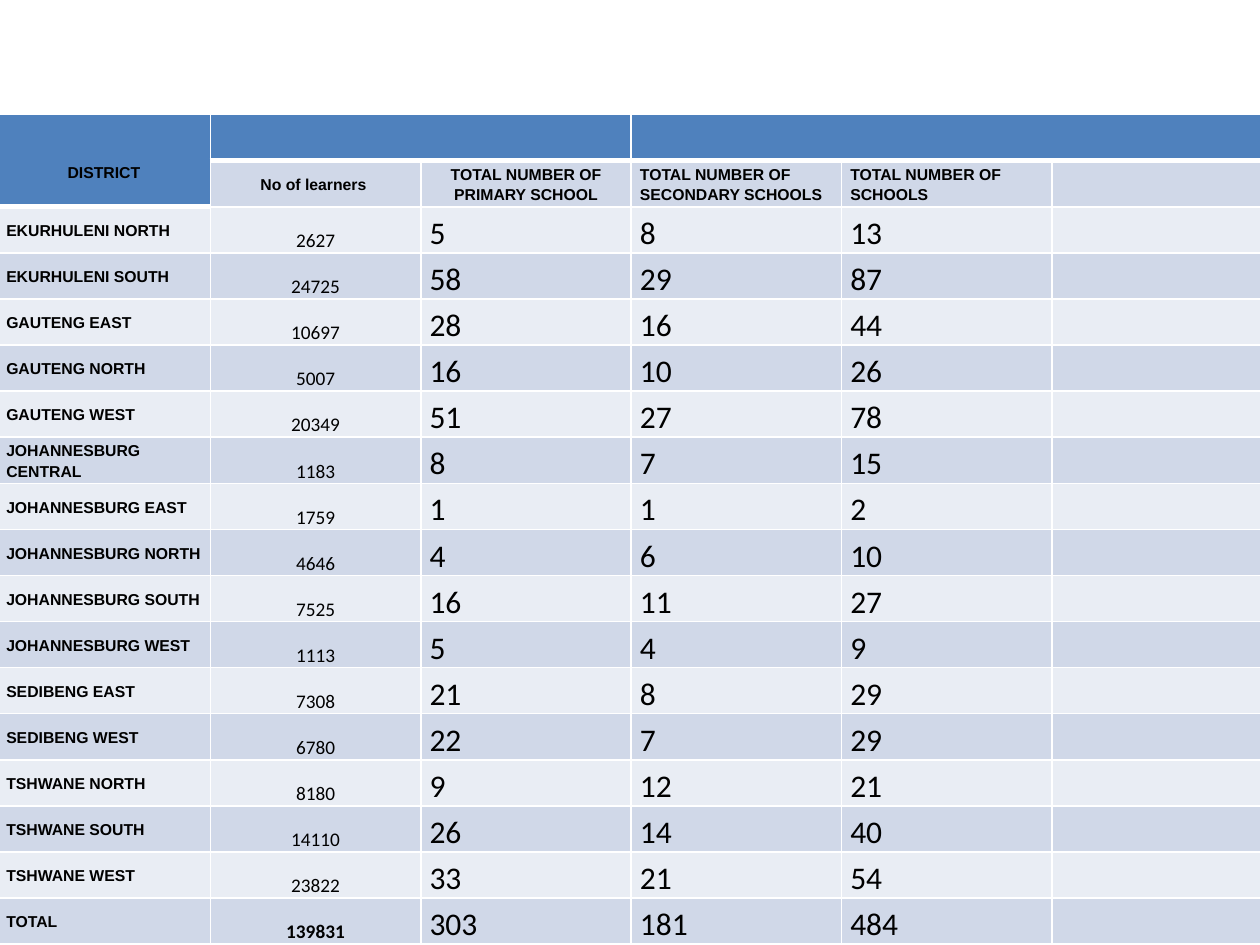
from lxml.etree import SubElement
from pptx import Presentation
from pptx.dml.color import RGBColor
from pptx.enum.text import MSO_ANCHOR, PP_ALIGN
from pptx.oxml.ns import qn
from pptx.util import Inches, Pt

# Content
HEADINGS = ["No of learners ", "TOTAL NUMBER OF PRIMARY SCHOOL",
            "TOTAL NUMBER OF SECONDARY SCHOOLS", "TOTAL NUMBER OF SCHOOLS"]
DISTRICTS = [  # district, learners, primary, secondary, all schools
    ("EKURHULENI NORTH", 2627, 5, 8, 13),
    ("EKURHULENI SOUTH", 24725, 58, 29, 87),
    ("GAUTENG EAST", 10697, 28, 16, 44),
    ("GAUTENG NORTH", 5007, 16, 10, 26),
    ("GAUTENG WEST", 20349, 51, 27, 78),
    ("JOHANNESBURG CENTRAL", 1183, 8, 7, 15),
    ("JOHANNESBURG EAST", 1759, 1, 1, 2),
    ("JOHANNESBURG NORTH", 4646, 4, 6, 10),
    ("JOHANNESBURG SOUTH", 7525, 16, 11, 27),
    ("JOHANNESBURG WEST", 1113, 5, 4, 9),
    ("SEDIBENG EAST", 7308, 21, 8, 29),
    ("SEDIBENG WEST", 6780, 22, 7, 29),
    ("TSHWANE NORTH", 8180, 9, 12, 21),
    ("TSHWANE SOUTH", 14110, 26, 14, 40),
    ("TSHWANE WEST", 23822, 33, 21, 54),
    ("TOTAL", 139831, 303, 181, 484),
]
COLS, ROWS = 6, len(DISTRICTS) + 2
LEFT, TOP, WIDTH, HEIGHT = -0.02, 0.91, 10.04, 6.59
FIRST_COL, OTHER_COL = 1.69, 1.67
BLUE, BAND_DARK, BAND_LIGHT = "4F81BD", "D0D8E8", "E9EDF4"
WHITE, BLACK = "FFFFFF", "000000"


def color(value):
    return RGBColor.from_string(value)


def add_border(cell, side, width):
    ln = SubElement(cell._tc.get_or_add_tcPr(), qn(f"a:ln{side}"), w=str(Pt(width)))
    fill = SubElement(ln, qn("a:solidFill"))
    SubElement(fill, qn("a:srgbClr"), val=WHITE)


def style_cell(cell, row, col):
    header = row == 0 or (row == 1 and col == 0)
    add_border(cell, "L", 1)
    add_border(cell, "R", 1)
    if row == 0:
        add_border(cell, "T", 1)
    add_border(cell, "B", 3 if header else 1)
    cell.fill.solid()
    band = BAND_DARK if row % 2 else BAND_LIGHT
    cell.fill.fore_color.rgb = color(BLUE if header else band)
    cell.margin_left = cell.margin_right = Inches(0.07)
    cell.margin_top = cell.margin_bottom = 0


def write(cell, text, size=9, font="Arial", bold=True, align=PP_ALIGN.LEFT,
          anchor=MSO_ANCHOR.MIDDLE, line=1.15, after=0):
    cell.vertical_anchor = anchor
    p = cell.text_frame.paragraphs[0]
    p.text = str(text)
    p.alignment = align
    p.line_spacing = line
    p.space_after = Pt(after)
    p.font.size, p.font.name, p.font.bold = Pt(size), font, bold
    p.font.color.rgb = color(BLACK)


prs = Presentation()
prs.slide_width, prs.slide_height = Inches(10), Inches(7.5)
s = prs.slides.add_slide(prs.slide_layouts[6])

# Table grid
table = s.shapes.add_table(ROWS, COLS, Inches(LEFT), Inches(TOP),
                           Inches(WIDTH), Inches(HEIGHT)).table
for i, column in enumerate(table.columns):
    column.width = Inches(OTHER_COL if i else FIRST_COL)
for r, row in enumerate(table.rows):
    row.height = Inches(HEIGHT / ROWS)
    for c, cell in enumerate(row.cells):
        style_cell(cell, r, c)

# Headings
table.cell(0, 0).merge(table.cell(1, 0))
table.cell(0, 1).merge(table.cell(0, 2))
table.cell(0, 3).merge(table.cell(0, 5))
write(table.cell(0, 0), "DISTRICT", align=PP_ALIGN.CENTER)
table.cell(0, 0).margin_top = Inches(0.17)
for c, heading in enumerate(HEADINGS, 1):
    write(table.cell(1, c), heading,
          align=PP_ALIGN.CENTER if c <= 2 else PP_ALIGN.LEFT)

# District rows
for r, (district, learners, *schools) in enumerate(DISTRICTS, 2):
    write(table.cell(r, 0), district, after=10)
    write(table.cell(r, 1), learners, 11, "Calibri", district == "TOTAL",
          PP_ALIGN.CENTER, MSO_ANCHOR.BOTTOM, after=10)
    for c, count in enumerate(schools, 2):
        write(table.cell(r, c), count, 18, "Calibri", False,
              anchor=MSO_ANCHOR.BOTTOM, line=1.0)

prs.save("out.pptx")
